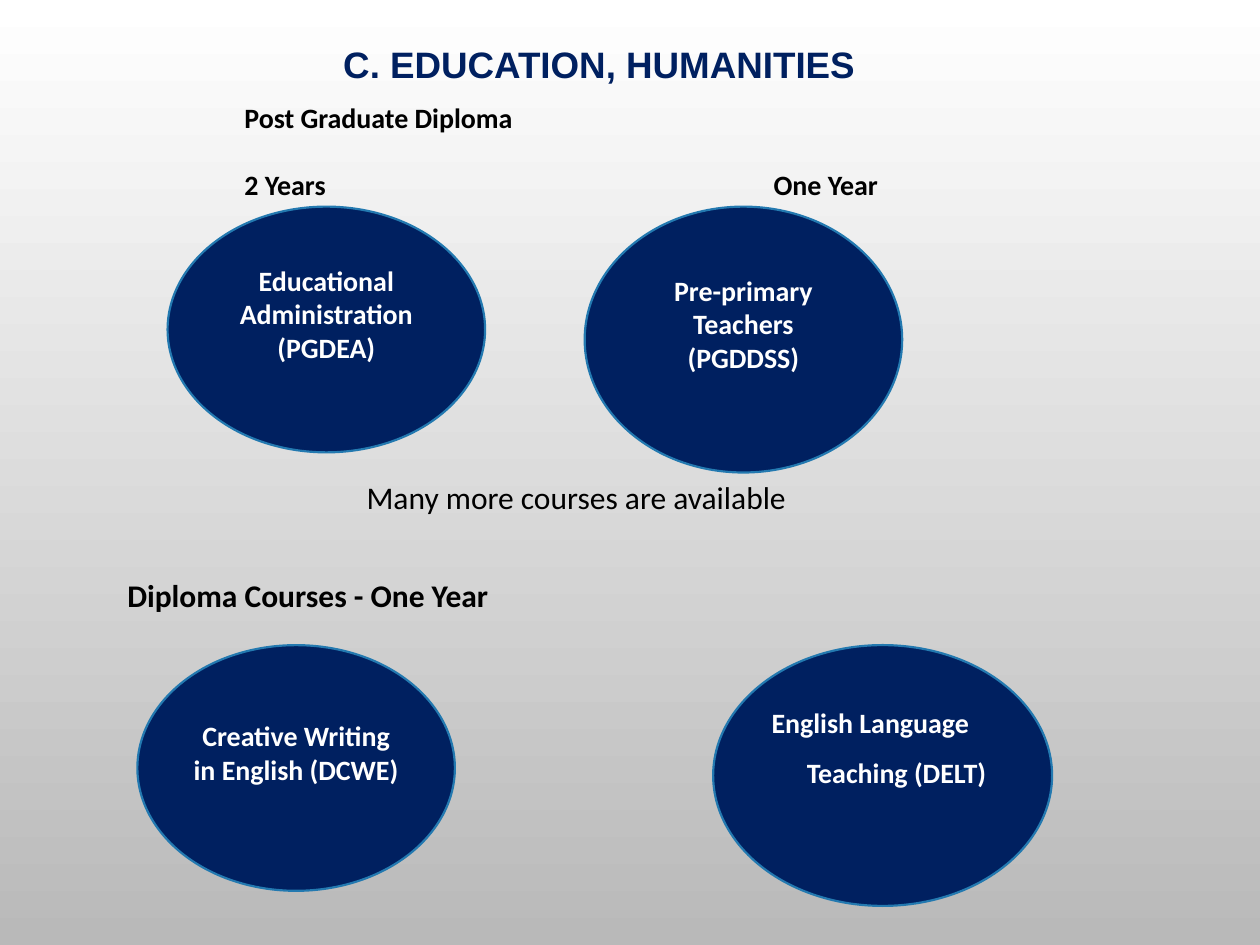
from lxml import etree
from pptx import Presentation
from pptx.dml.color import RGBColor
from pptx.enum.shapes import MSO_SHAPE
from pptx.enum.text import MSO_ANCHOR, PP_ALIGN
from pptx.oxml.ns import qn
from pptx.util import Inches, Pt

OVAL = MSO_SHAPE.OVAL
TOP, MIDDLE = MSO_ANCHOR.TOP, MSO_ANCHOR.MIDDLE
LEFT, CENTER = PP_ALIGN.LEFT, PP_ALIGN.CENTER
NAVY = RGBColor(0x00, 0x20, 0x60)
BLUE = RGBColor(0x23, 0x79, 0xB0)
BLACK = RGBColor(0x00, 0x00, 0x00)
WHITE = RGBColor(0xFF, 0xFF, 0xFF)
GRAY = RGBColor(0xB9, 0xB9, 0xB9)


def write_text(shape, text, size=16, font="Calibri", color=BLACK, bold=True,
               align=LEFT, anchor=TOP, left_inset=0.07, bottom_inset=0.04,
               gap=0, hanging=0, line_spacing=1.0, tab=None):
    frame = shape.text_frame
    frame.word_wrap = True
    frame.vertical_anchor = anchor
    frame.margin_left, frame.margin_right = Inches(left_inset), Inches(0.07)
    frame.margin_top, frame.margin_bottom = Inches(0.04), Inches(bottom_inset)
    frame.text = text
    for index, paragraph in enumerate(frame.paragraphs):
        properties = paragraph._p.get_or_add_pPr()
        if hanging:
            properties.set("marL", str(Inches(hanging)))
            properties.set("indent", str(-Inches(hanging)))
        if tab:
            tabs = etree.SubElement(properties, qn("a:tabLst"))
            etree.SubElement(tabs, qn("a:tab"), pos=str(Inches(tab)), algn="l")
        paragraph.alignment = align
        paragraph.line_spacing = line_spacing
        paragraph.space_before = Pt(gap if index else 0)
        paragraph.font.size = Pt(size)
        paragraph.font.name = font
        paragraph.font.bold = bold
        paragraph.font.color.rgb = color


presentation = Presentation()
presentation.slide_width = Inches(10)
presentation.slide_height = Inches(7.5)
slide = presentation.slides.add_slide(presentation.slide_layouts[5])

background = slide.background.fill
background.gradient()
background.gradient_angle = 270
for stop, color in zip(background.gradient_stops, (WHITE, GRAY)):
    stop.color.rgb = color

title = slide.shapes.title
title.left, title.top = Inches(2.35), Inches(0.29)
title.width, title.height = Inches(4.81), Inches(0.78)
write_text(title, "C. EDUCATION, HUMANITIES", size=21, font="Arial",
           color=NAVY, align=CENTER)

labels = [
    (0.75, 0.76, 7.08, 1.15, "Post Graduate Diploma\n2 Years\tOne Year",
     {"left_inset": 1.19, "gap": 19, "tab": 4.2}),
    (1.86, 3.75, 4.56, 0.38, "Many more courses are available",
     {"size": 18, "bold": False, "left_inset": 1.05}),
    (0.44, 4.53, 9.19, 0.38, "Diploma Courses - One Year",
     {"size": 18, "left_inset": 0.57, "anchor": MIDDLE}),
]
for left, top, width, height, text, text_format in labels:
    label = slide.shapes.add_textbox(Inches(left), Inches(top), Inches(width), Inches(height))
    write_text(label, text, **text_format)

centered = {"align": CENTER, "anchor": MIDDLE, "bottom_inset": 0.29}
courses = [
    (1.33, 1.64, 2.52, 1.95, "Educational Administration (PGDEA)", centered),
    (4.64, 1.64, 2.52, 2.11, "Pre-primary Teachers (PGDDSS)", centered),
    (1.09, 5.12, 2.52, 1.95, "Creative Writing in English (DCWE)", centered),
    (5.66, 5.12, 2.69, 2.07, "English Language Teaching (DELT)",
     {"hanging": 0.28, "line_spacing": 1.5}),
]
for left, top, width, height, text, text_format in courses:
    course = slide.shapes.add_shape(OVAL, Inches(left), Inches(top), Inches(width), Inches(height))
    course.shadow.inherit = False
    course.fill.solid()
    course.fill.fore_color.rgb = NAVY
    course.line.color.rgb = BLUE
    course.line.width = Pt(1.25)
    write_text(course, text, color=WHITE, **text_format)

presentation.save("out.pptx")
